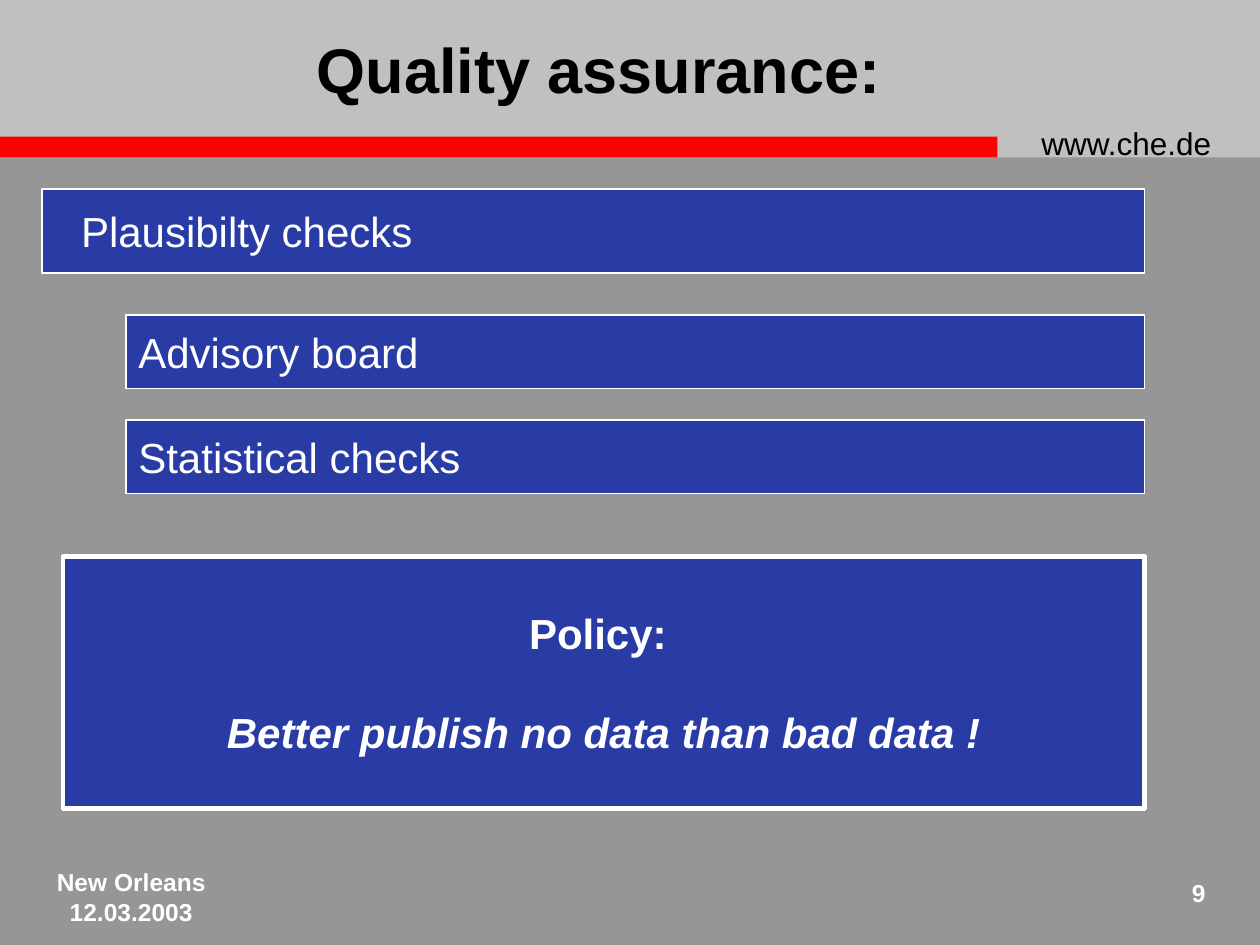
"""Build the quality assurance slide on a grid of 120 columns by 90 rows."""
from pptx import Presentation
from pptx.dml.color import RGBColor
from pptx.enum.shapes import MSO_SHAPE
from pptx.enum.text import MSO_ANCHOR, PP_ALIGN
from pptx.util import Inches, Pt

RECT = MSO_SHAPE.RECTANGLE
TOP, MIDDLE = MSO_ANCHOR.TOP, MSO_ANCHOR.MIDDLE
LEFT, CENTER, RIGHT = PP_ALIGN.LEFT, PP_ALIGN.CENTER, PP_ALIGN.RIGHT
COLORS = {"back": "969696", "header": "C0C0C0", "accent": "FF0000",
          "box": "293BA5", "light": "FFFFFF", "dark": "000000"}


class SlideBuilder:
    """Holds the style and the current slide."""

    font = "Arial"
    columns, rows = 120, 90

    def __init__(self, prs):
        self.cell_w = prs.slide_width / self.columns
        self.cell_h = prs.slide_height / self.rows
        self.slide = prs.slides.add_slide(prs.slide_layouts[6])
        fill = self.slide.background.fill
        fill.solid()
        fill.fore_color.rgb = self.color("back")

    def color(self, name):
        return RGBColor.from_string(COLORS[name])

    def place(self, col, row, width, height):
        return (round(col * self.cell_w), round(row * self.cell_h),
                round(width * self.cell_w), round(height * self.cell_h))

    def set_text(self, sp, lines, size, color="light", bold=False,
                 align=LEFT, anchor=TOP, gap=0):
        tf = sp.text_frame
        tf.word_wrap = True
        tf.vertical_anchor = anchor
        for i, line in enumerate(lines):
            p = tf.add_paragraph() if i else tf.paragraphs[0]
            p.text = line
            p.alignment = align
            if i and gap:
                p.space_before = Pt(gap)
            p.font.name = self.font
            p.font.size = Pt(size)
            p.font.bold = bold
            p.font.color.rgb = self.color(color)
        return tf

    def bar(self, grid, color):
        sp = self.slide.shapes.add_shape(RECT, *self.place(*grid))
        sp.shadow.inherit = False
        sp.fill.solid()
        sp.fill.fore_color.rgb = self.color(color)
        sp.line.fill.background()
        return sp

    def box(self, grid, lines, border=0.75, **style):
        sp = self.bar(grid, "box")
        sp.line.color.rgb = self.color("light")
        sp.line.width = Pt(border)
        return self.set_text(sp, lines, 24, anchor=MIDDLE, **style)

    def text(self, grid, lines, size, **style):
        sp = self.slide.shapes.add_textbox(*self.place(*grid))
        return self.set_text(sp, lines, size, **style)


def main():
    prs = Presentation()
    prs.slide_width, prs.slide_height = Inches(10), Inches(7.5)
    s = SlideBuilder(prs)

    s.bar((0, 0, 120, 15), "header")
    s.bar((0, 13, 95, 2), "accent")
    s.text((98, 11.25, 21, 4.8), ["www.che.de"], 18, color="dark")
    s.text((0, 82, 25, 6), ["New Orleans", "12.03.2003"], 14,
           bold=True, align=CENTER)
    s.text((109, 83, 7, 5), ["9"], 14, bold=True, align=RIGHT)
    s.text((29, 0, 68, 13), ["Quality assurance:"], 36, color="dark",
           bold=True, anchor=MIDDLE)

    tf = s.box((4, 18, 105, 8), ["Plausibilty checks"])
    tf.margin_left = Inches(0.31)
    for i, check in enumerate(["Advisory board", "Statistical checks"]):
        s.box((12, 30 + 10 * i, 97, 7), [check])
    tf = s.box((6, 53, 103, 24),
               ["Policy: ", "Better publish no data than bad data !"],
               border=2.5, bold=True, align=CENTER, gap=28)
    tf.paragraphs[1].font.italic = True

    prs.save("out.pptx")


if __name__ == "__main__":
    main()
